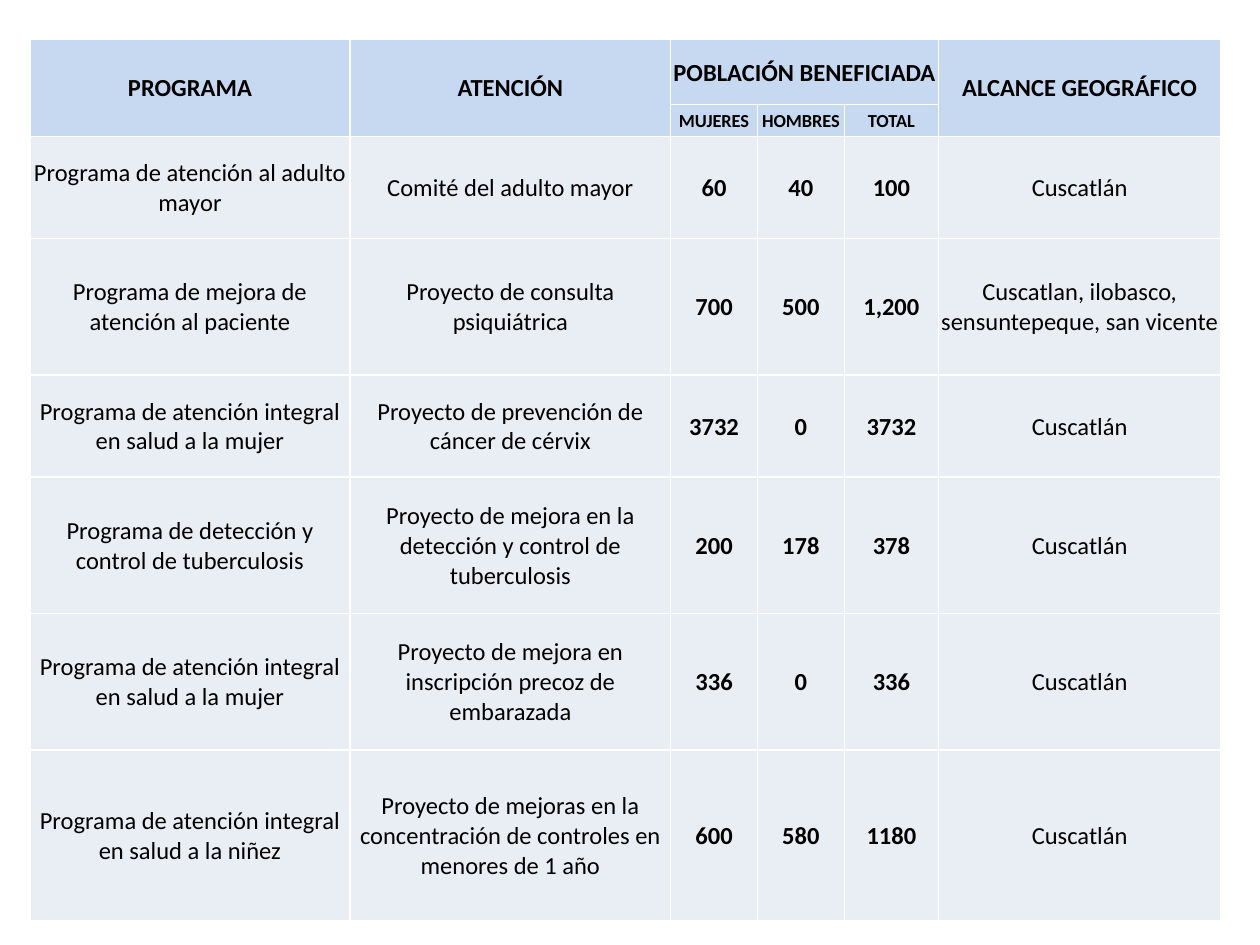
from lxml.etree import SubElement
from pptx import Presentation
from pptx.dml.color import RGBColor
from pptx.enum.text import MSO_ANCHOR as Anchor, PP_ALIGN as Align
from pptx.oxml.ns import qn
from pptx.util import Cm, Pt

HEADER_BLUE = RGBColor(0xC6, 0xD9, 0xF1)
BODY_GREY = RGBColor(0xE9, 0xED, 0xF4)
BLACK = RGBColor(0, 0, 0)
WHITE = RGBColor(0xFF, 0xFF, 0xFF)

COLUMN_WIDTHS = [6.46, 6.46, 1.75, 1.75, 1.9, 5.69]
ROW_HEIGHTS = [1.31, 0.64, 2.06, 2.75, 2.06, 2.75, 2.75, 3.44]
HEADER_ROWS = 2
NUMBER_COLUMNS = range(2, 5)
MERGES = [((0, 0), (1, 0)), ((0, 1), (1, 1)), ((0, 2), (0, 4)), ((0, 5), (1, 5))]
ROWS = [
    ["PROGRAMA", "ATENCIÓN", "POBLACIÓN BENEFICIADA", "", "", "ALCANCE GEOGRÁFICO"],
    ["", "", "MUJERES", "HOMBRES", "TOTAL", ""],
    ["Programa de atención al adulto mayor", "Comité del adulto mayor",
     "60", "40", "100", "Cuscatlán"],
    ["Programa de mejora de atención al paciente", "Proyecto de consulta psiquiátrica",
     "700", "500", "1,200", "Cuscatlan, ilobasco, sensuntepeque, san vicente"],
    ["Programa de atención integral en salud a la mujer",
     "Proyecto de prevención de cáncer de cérvix", "3732", "0", "3732", "Cuscatlán"],
    ["Programa de detección y control de tuberculosis",
     "Proyecto de mejora en la detección y control de tuberculosis",
     "200", "178", "378", "Cuscatlán"],
    ["Programa de atención integral en salud a la mujer",
     "Proyecto de mejora en inscripción precoz de embarazada",
     "336", "0", "336", "Cuscatlán"],
    ["Programa de atención integral en salud a la niñez",
     "Proyecto de mejoras en la concentración de controles en menores de 1 año",
     "600", "580", "1180", "Cuscatlán"],
]


def add_borders(cell, color, width):
    """Draw a solid line on all four sides of a cell."""
    properties = cell._tc.get_or_add_tcPr()
    for position, side in enumerate(("a:lnL", "a:lnR", "a:lnT", "a:lnB")):
        line = SubElement(properties, qn(side), w=str(width))
        fill = SubElement(line, qn("a:solidFill"))
        SubElement(fill, qn("a:srgbClr"), val=str(color))
        properties.insert(position, line)


def format_cell(cell, text, size, bold, fill):
    """Fill a cell with centred text."""
    cell.text = text
    cell.vertical_anchor = Anchor.MIDDLE
    cell.margin_left = cell.margin_right = cell.margin_top = Cm(0.02)
    cell.margin_bottom = 0
    cell.fill.solid()
    cell.fill.fore_color.rgb = fill
    add_borders(cell, WHITE, Pt(1))
    paragraph = cell.text_frame.paragraphs[0]
    paragraph.alignment = Align.CENTER
    font = paragraph.font
    font.name, font.size, font.bold = "Calibri", Pt(size), bold
    font.color.rgb = BLACK


def add_program_table(slide, left, top):
    """Place the table of programmes with its two-level header."""
    table = slide.shapes.add_table(
        len(ROWS), len(COLUMN_WIDTHS), left, top,
        Cm(sum(COLUMN_WIDTHS)), Cm(sum(ROW_HEIGHTS))).table
    table.horz_banding = False
    for column, width in zip(table.columns, COLUMN_WIDTHS):
        column.width = Cm(width)
    for row, height in zip(table.rows, ROW_HEIGHTS):
        row.height = Cm(height)
    for row_index, texts in enumerate(ROWS):
        is_header = row_index < HEADER_ROWS
        for column_index, text in enumerate(texts):
            format_cell(
                table.cell(row_index, column_index), text,
                size=10.5 if row_index == 1 else 14,
                bold=is_header or column_index in NUMBER_COLUMNS,
                fill=HEADER_BLUE if is_header else BODY_GREY)
    for first, last in MERGES:
        table.cell(*first).merge(table.cell(*last))


def main():
    """Build the slide and save it."""
    presentation = Presentation()
    presentation.slide_width, presentation.slide_height = Cm(25.4), Cm(19.05)
    slide = presentation.slides.add_slide(presentation.slide_layouts[6])
    add_program_table(slide, Cm(0.6), Cm(0.8))
    presentation.save("out.pptx")


if __name__ == "__main__":
    main()
